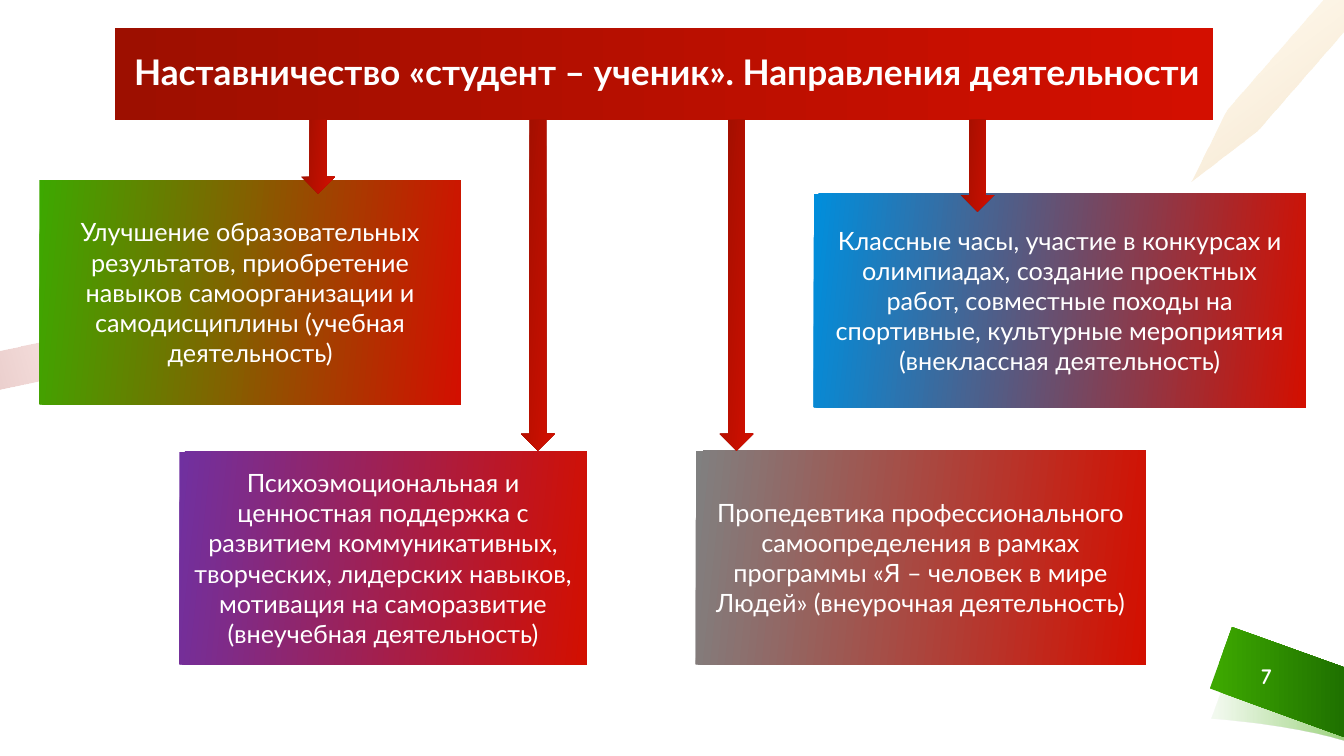
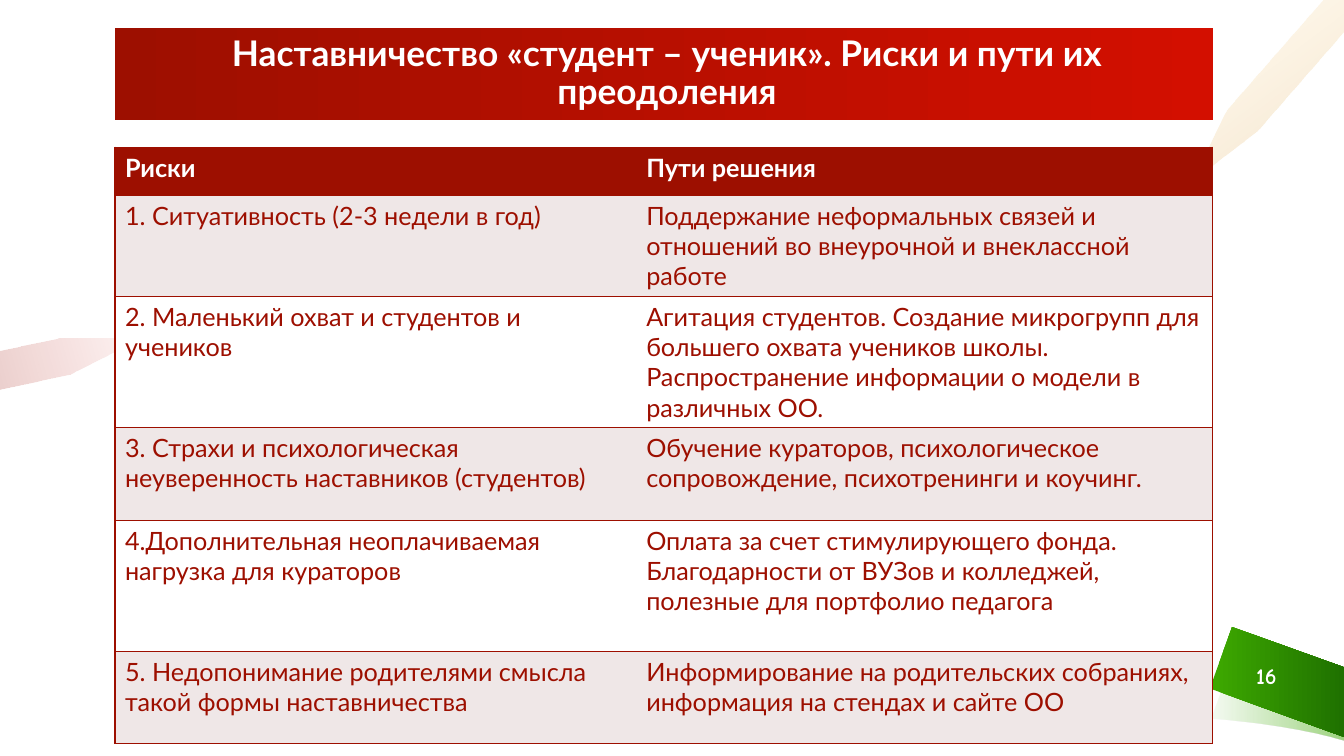
from lxml.etree import SubElement
from pptx import Presentation
from pptx.dml.color import RGBColor
from pptx.enum.shapes import MSO_SHAPE
from pptx.enum.text import MSO_ANCHOR, PP_ALIGN
from pptx.oxml import parse_xml
from pptx.oxml.ns import nsdecls, qn
from pptx.util import Inches, Pt

HUES = {
    "red": "D30F00", "dark": "9D0F00", "green": "3DA800", "moss": "1F7100",
    "amber": "FFAA00", "brown": "C07400", "violet": "7030A0", "blue": "008EDC",
    "gray": "808080", "pale": "EFE7E7", "white": "FFFFFF",
}
FONT = "Lato"
LEFT, WIDTH = 1.14, 10.89

THEME = "Наставничество «студент – ученик». "
AIMS = [
    ("Улучшение образовательных результатов, приобретение навыков "
     "самоорганизации и самодисциплины (учебная деятельность)",
     "green", (0.39, 1.79, 4.18, 2.22)),
    ("Психоэмоциональная и ценностная поддержка с развитием коммуникативных, "
     "творческих, лидерских навыков, мотивация на саморазвитие "
     "(внеучебная деятельность)",
     "violet", (1.78, 4.48, 4.04, 2.11)),
    ("Классные часы, участие в конкурсах и олимпиадах, создание проектных работ, "
     "совместные походы на спортивные, культурные мероприятия "
     "(внеклассная деятельность)",
     "blue", (8.07, 1.92, 4.88, 2.12)),
    ("Пропедевтика профессионального самоопределения в рамках программы "
     "«Я – человек в мире Людей» (внеурочная деятельность)",
     "gray", (6.9, 4.47, 4.46, 2.12)),
]
ARROWS = [(2.99, 0.73), (5.17, 3.28), (7.14, 3.28), (9.53, 0.91)]

RISKS = [
    ("Риски", "Пути решения", 0.48),
    ("1. Ситуативность (2-3 недели в год)",
     "Поддержание неформальных связей и отношений во внеурочной и внеклассной работе", 1.0),
    ("2. Маленький охват и студентов и учеников",
     "Агитация студентов. Создание микрогрупп для большего охвата учеников школы. "
     "Распространение информации о модели в различных ОО.", 1.3),
    ("3. Страхи и психологическая неуверенность наставников (студентов)",
     "Обучение кураторов, психологическое сопровождение, психотренинги и коучинг.", 0.92),
    ("4.Дополнительная неоплачиваемая нагрузка для кураторов",
     "Оплата за счет стимулирующего фонда. Благодарности от ВУЗов и колледжей, "
     "полезные для портфолио педагога", 1.3),
    ("5. Недопонимание родителями смысла такой формы наставничества",
     "Информирование на родительских собраниях, информация на стендах и сайте ОО", 0.92),
]
COLS = (5.17, 5.72)


def curve(a, b, c, d, steps=12):
    def point(t):
        u = 1 - t
        return tuple(u**3 * p + 3 * u * u * t * q + 3 * u * t * t * r + t**3 * s
                     for p, q, r, s in zip(a, b, c, d))
    return [point(i / steps) for i in range(steps + 1)]


SHADE = (curve((12.02, 7.13), (12.02, 7.13), (12.78, 7.18), (13.33, 7.35))
         + curve((13.33, 6.68), (12.72, 6.51), (12.24, 6.52), (12.24, 6.52)))
DECOR = [
    (SHADE, ("green", "green"), dict(start=3, alpha=(6, 50))),
    ([(13.33, 6.62), (12.22, 6.22), (12, 6.83), (13.33, 7.31)],
     ("green", "moss"), dict(start=3)),
    ([(1.4, 3.36), (0.58, 3.36), (0, 3.48), (0, 3.86), (0.7, 3.71)],
     ("red", "dark"), dict(angle=164, alpha=(5, 20))),
    ([(13.12, 0), (12.17, 1.09), (11.82, 1.8), (12.47, 1.3), (13.33, 0.31), (13.33, 0)],
     ("amber", "brown"), dict(angle=53, alpha=(5, 20))),
]


def color(name):
    return RGBColor.from_string(HUES[name])


def blend(shape, hues, angle=0, start=0, alpha=None):
    shape.shadow.inherit = False
    shape.line.fill.background()
    shape.fill.gradient()
    shape.fill.gradient_angle = -angle % 360
    for stop, hue, place in zip(shape.fill.gradient_stops, hues, (start, 100)):
        stop.color.rgb = color(hue)
        stop.position = place / 100
    if alpha:
        for node, part in zip(shape._element.spPr.iter(qn("a:srgbClr")), alpha):
            SubElement(node, qn("a:alpha")).set("val", str(part * 1000))


def write(frame, text, size=18, font=FONT, hue="white", bold=False,
          align=PP_ALIGN.CENTER, space=None):
    frame.word_wrap = True
    para = frame.paragraphs[0]
    para.alignment = align
    para.line_spacing = space
    run = para.add_run()
    run.text = text
    run.font.size = Pt(size)
    run.font.name = font
    run.font.bold = bold
    run.font.color.rgb = color(hue)


def block(slide, box, hues, angle=6, kind=MSO_SHAPE.RECTANGLE):
    shape = slide.shapes.add_shape(kind, *map(Inches, box))
    blend(shape, hues, angle)
    shape.text_frame.vertical_anchor = MSO_ANCHOR.MIDDLE
    return shape


def start(deck, title, number):
    slide = deck.slides.add_slide(deck.slide_layouts[6])
    for points, hues, style in DECOR:
        dots = [(Inches(x), Inches(y)) for x, y in points]
        pen = slide.shapes.build_freeform(*dots[0])
        pen.add_line_segments(dots[1:], close=True)
        blend(pen.convert_to_shape(), hues, **style)
    label = slide.shapes.add_textbox(*map(Inches, (12.21, 6.5, 0.7, 0.4)))
    label.text_frame.vertical_anchor = MSO_ANCHOR.MIDDLE
    write(label.text_frame, number, size=16, font="Comic Neue", bold=True)
    head = block(slide, (LEFT, 0.28, WIDTH, 0.91), ("red", "dark"), 180)
    head.text_frame.margin_left = Inches(0.16)
    write(head.text_frame, THEME + title, size=25.2, bold=True, space=0.9)
    return slide


def edge(cell, shown):
    props = cell._tc.get_or_add_tcPr()
    for spot, side in enumerate("LRTB"):
        paint = (f'<a:solidFill><a:srgbClr val="{HUES["dark"]}"/></a:solidFill>'
                 if side in shown else "<a:noFill/>")
        props.insert(spot, parse_xml(
            f'<a:ln{side} {nsdecls("a")} w="12700">{paint}</a:ln{side}>'))


def aims(deck):
    slide = start(deck, "Направления деятельности", "7")
    for text, hue, box in AIMS:
        write(block(slide, box, (hue, "red")).text_frame, text)
    for left, height in ARROWS:
        block(slide, (left, 1.19, 0.33, height), ("dark", "red"),
              kind=MSO_SHAPE.DOWN_ARROW)


def risks(deck):
    slide = start(deck, "Риски и пути их преодоления", "16")
    high = sum(row[2] for row in RISKS)
    grid = slide.shapes.add_table(
        len(RISKS), len(COLS), *map(Inches, (LEFT, 1.46, WIDTH, high))).table
    for col, width in zip(grid.columns, COLS):
        col.width = Inches(width)
    for r, (*texts, height) in enumerate(RISKS):
        grid.rows[r].height = Inches(height)
        fill = "dark" if r == 0 else "pale" if r % 2 else "white"
        for c, text in enumerate(texts):
            cell = grid.cell(r, c)
            cell.fill.solid()
            cell.fill.fore_color.rgb = color(fill)
            edge(cell, "TB" + "LR"[c])
            write(cell.text_frame, text, hue="dark" if r else "white",
                  bold=r == 0, align=PP_ALIGN.LEFT)


def main():
    deck = Presentation()
    deck.slide_width, deck.slide_height = Inches(13.33), Inches(7.5)
    aims(deck)
    risks(deck)
    deck.save("out.pptx")


if __name__ == "__main__":
    main()
